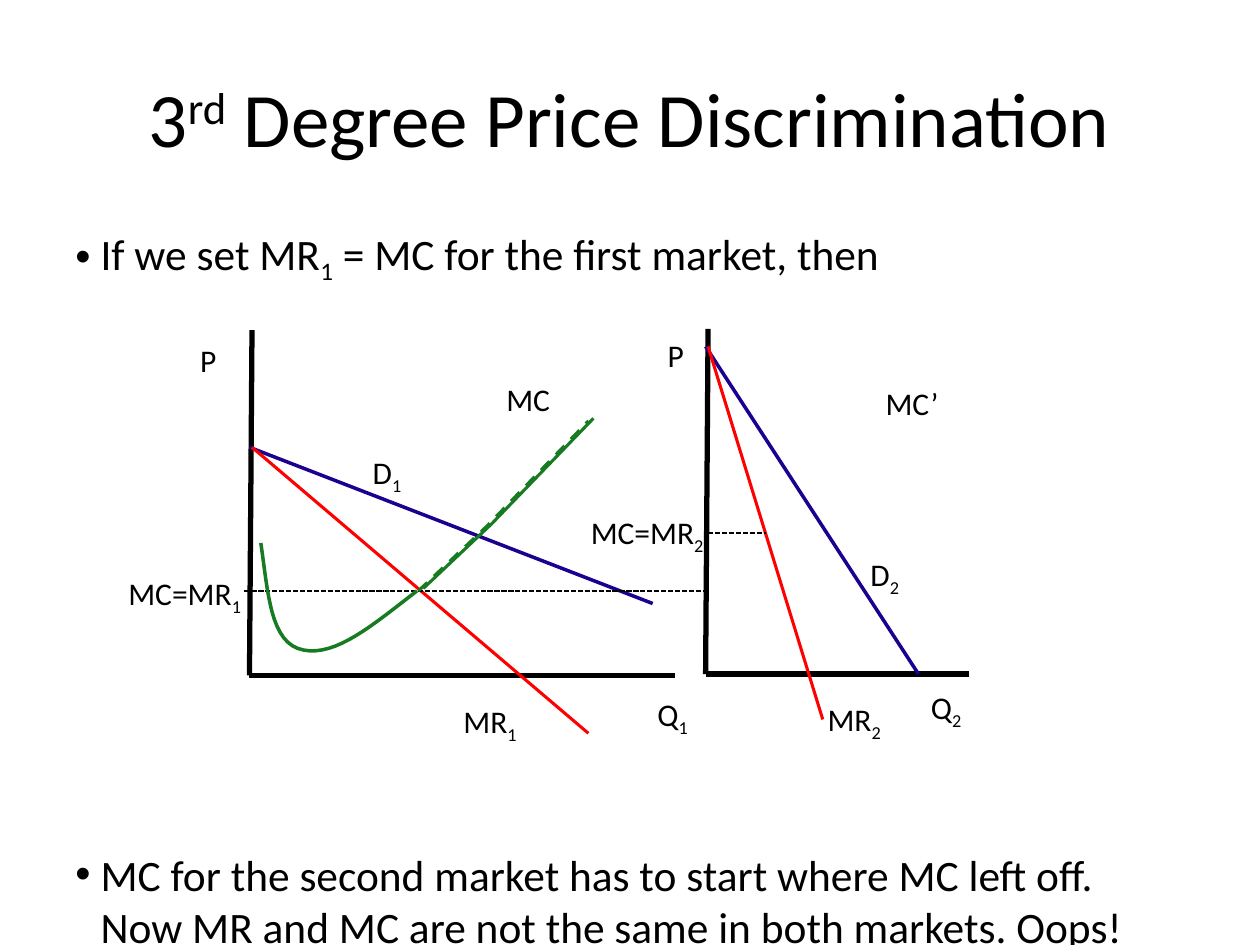
from collections import namedtuple
from itertools import pairwise

from lxml import etree
from pptx import Presentation
from pptx import util as u
from pptx.dml import color
from pptx.enum import dml, shapes, text
from pptx.oxml import ns

COLORS = {"ink": "000000", "demand": "1C0191", "revenue": "FF0000", "cost": "177B21"}
FONT = "Calibri"
CELL = u.Inches(0.1)
COLUMNS, ROWS = 100, 75
LABEL_ROWS = 4
SUB, SUPER = -25000, 30000

Box = namedtuple("Box", "left top width height")


def cells(count):
    return round(count * CELL)


def spot(box, point):
    return cells(box.left + point[0]), cells(box.top + point[1])


def style_line(shape, name, width, dash=None):
    shape.line.color.rgb = color.RGBColor.from_string(COLORS[name])
    shape.line.width = u.Pt(width)
    if dash:
        shape.line.dash_style = dash


def segment(slide, box, start, end, name, width, dash=None):
    line = slide.shapes.add_connector(
        shapes.MSO_CONNECTOR.STRAIGHT, *spot(box, start), *spot(box, end))
    style_line(line, name, width, dash)
    etree.SubElement(line._element.spPr, ns.qn("a:effectLst"))


def bezier(points, steps=16):
    weights = (1, 3, 3, 1)
    return [
        tuple(sum(w * (1 - t) ** (3 - i) * t ** i * p[axis]
                  for i, (w, p) in enumerate(zip(weights, points)))
              for axis in (0, 1))
        for t in (step / steps for step in range(steps + 1))]


def curve(slide, box, points, name, width, dash=None):
    builder = slide.shapes.build_freeform(*spot(box, points[0]))
    builder.add_line_segments([spot(box, p) for p in points[1:]], close=False)
    outline = builder.convert_to_shape()
    outline.shadow.inherit = False
    outline.fill.background()
    style_line(outline, name, width, dash)


def write(para, parts, size):
    for words, baseline in parts:
        span = para.add_run()
        span.text = words
        span.font.name = FONT
        span.font.size = u.Pt(size)
        span.font.color.rgb = color.RGBColor.from_string(COLORS["ink"])
        if baseline:
            span._r.get_or_add_rPr().set("baseline", str(baseline))


def text_frame(slide, box, wrap=True):
    frame = slide.shapes.add_textbox(
        *spot(box, (0, 0)), cells(box.width), cells(box.height)).text_frame
    frame.word_wrap = wrap
    return frame


def label(slide, box, words, subscript, column, row, width):
    area = Box(box.left + column, box.top + row, width, LABEL_ROWS)
    frame = text_frame(slide, area, wrap=False)
    frame.auto_size = text.MSO_AUTO_SIZE.SHAPE_TO_FIT_TEXT
    write(frame.paragraphs[0], [(words, 0)] + [(subscript, SUB)] * bool(subscript), 18)


def title(slide, box):
    frame = text_frame(slide, box)
    frame.vertical_anchor = text.MSO_ANCHOR.MIDDLE
    para = frame.paragraphs[0]
    para.alignment = text.PP_ALIGN.CENTER
    write(para, [("3", 0), ("rd", SUPER), (" Degree Price Discrimination", 0)], 44)


def bullets(slide, box):
    frame = text_frame(slide, box)
    points = [
        (0, [("If we set MR", 0), ("1", SUB), (" = MC for the first market, then", 0)]),
        (321, [("MC for the second market has to start where MC left off. "
                "Now MR and MC are not the same in both markets. Oops!", 0)]),
    ]
    for index, (gap, parts) in enumerate(points):
        para = frame.add_paragraph() if index else frame.paragraphs[0]
        para.space_before = u.Pt(gap)
        write(para, parts, 24.8)
        settings = para._p.get_or_add_pPr()
        settings.set("marL", str(cells(2)))
        settings.set("indent", str(-cells(2)))
        etree.SubElement(settings, ns.qn("a:buFont")).set("typeface", "Arial")
        etree.SubElement(settings, ns.qn("a:buChar")).set("char", "•")


def market(slide, box, demand, revenue, price, labels):
    corners = [(0.2, 0), (0, box.height), (box.width, box.height)]
    for start, end in pairwise(corners):
        segment(slide, box, start, end, "ink", 3)
    segment(slide, box, *demand, "demand", 2)
    segment(slide, box, *revenue, "revenue", 1.75)
    segment(slide, box, *price, "ink", 1, dml.MSO_LINE.SQUARE_DOT)
    for entry in labels:
        label(slide, box, *entry)


def marginal_cost(slide, box):
    fall = bezier([(0.9, 16.9), (1.5, 20.8), (1.6, 24.9), (4.3, 25.4)])
    turn = bezier([(4.3, 25.4), (6.9, 25.9), (9.8, 23.4), (13.3, 20.7)])
    rise = bezier([(13.4, 20.7), (15.1, 19.1), (17.1, 17.2), (18.8, 15.6)]) + [(26.9, 7.2)]
    shifted = [(column + 0.4, row - 0.2) for column, row in rise]
    curve(slide, box, fall + turn[1:], "cost", 2)
    curve(slide, box, rise, "cost", 1.75, dml.MSO_LINE.DASH)
    curve(slide, box, shifted, "cost", 1.75)


def main():
    deck = Presentation()
    deck.slide_width, deck.slide_height = cells(COLUMNS), cells(ROWS)
    page = deck.slides.add_slide(deck.slide_layouts[6])

    title(page, Box(5, 3, 90, 12.5))
    bullets(page, Box(5, 17.5, 90, 56))

    first = Box(19.8, 26.2, 33.8, 27.4)
    market(
        page, first,
        demand=[(0, 9.3), (32, 21.7)],
        revenue=[(0.2, 9.3), (26.9, 32)],
        price=[(-0.4, 20.7), (36.4, 20.7)],
        labels=[
            ("P", "", -4.9, 0.4, 3.3),
            ("Q", "1", 31.4, 28.5, 4.6),
            ("MC", "", 19.4, 3.5, 5.5),
            ("MR", "1", 16, 29, 6.4),
            ("D", "1", 8.8, 9.3, 4.4),
            ("MC=MR", "1", -10.6, 18.9, 11.2),
        ])
    marginal_cost(page, first)

    market(
        page, Box(56, 26.1, 20.9, 27.4),
        demand=[(0, 1.4), (16.9, 27.4)],
        revenue=[(0.2, 1.4), (9.3, 31)],
        price=[(0.2, 16.2), (4.8, 16.2)],
        labels=[
            ("P", "", -4, 0.1, 3.3),
            ("Q", "2", 16.9, 28, 4.6),
            ("MC’", "", 13.3, 3.9, 6.5),
            ("MR", "2", 8.7, 29, 6.4),
            ("D", "2", 12.1, 17.5, 4.4),
            ("MC=MR", "2", -10.1, 14.1, 11.2),
        ])

    deck.save("out.pptx")


if __name__ == "__main__":
    main()
